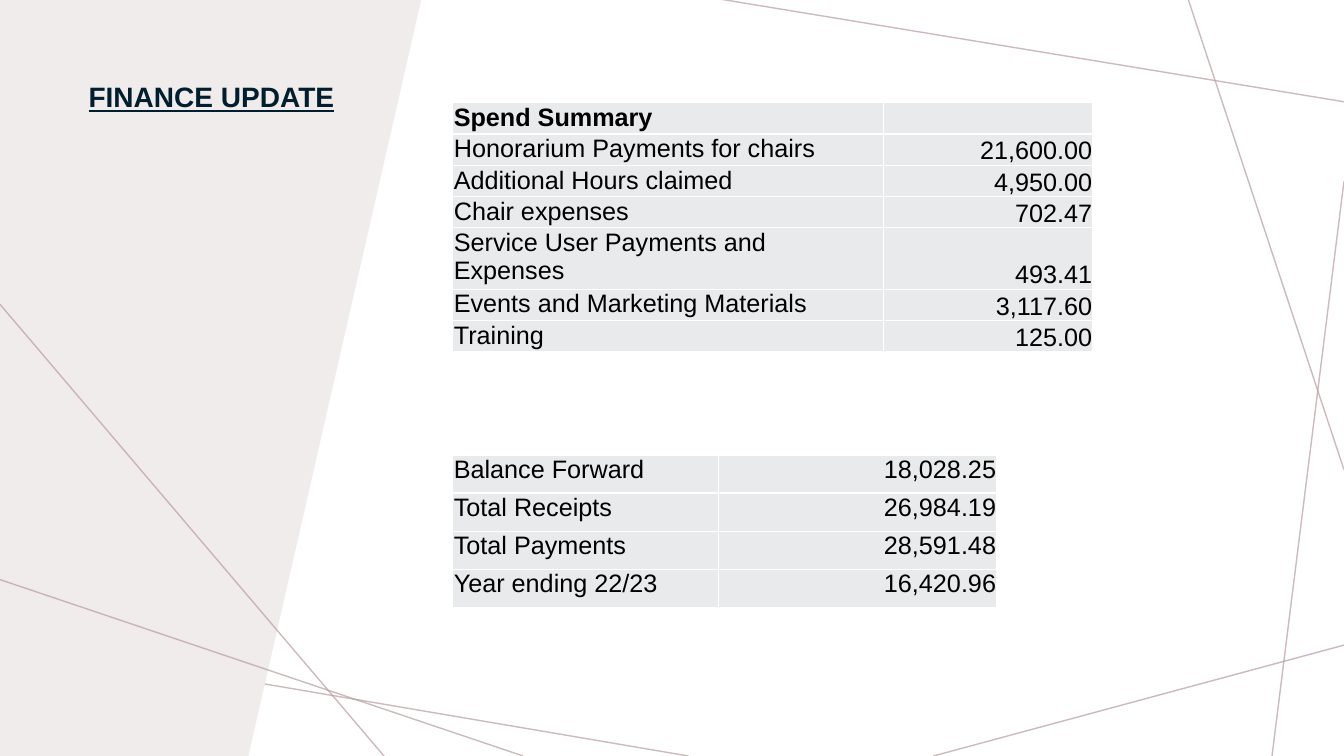
"""Builds the finance update slide with its two tables."""
from dataclasses import dataclass

from lxml import etree
from pptx import Presentation
from pptx.dml.color import RGBColor
from pptx.enum.shapes import MSO_CONNECTOR
from pptx.enum.text import MSO_ANCHOR, PP_ALIGN
from pptx.oxml import parse_xml
from pptx.oxml.ns import nsdecls, qn
from pptx.util import Pt

STRAIGHT = MSO_CONNECTOR.STRAIGHT
TOP, BOTTOM = MSO_ANCHOR.TOP, MSO_ANCHOR.BOTTOM
LEFT, RIGHT = PP_ALIGN.LEFT, PP_ALIGN.RIGHT


@dataclass(frozen=True)
class Theme:
    font: str = "Arial"
    title_size: int = 20
    table_size: int = 18
    title: RGBColor = RGBColor.from_string("001E2E")
    text: RGBColor = RGBColor.from_string("000000")
    panel: RGBColor = RGBColor.from_string("F0ECEC")
    ray: RGBColor = RGBColor.from_string("BA9CA0")
    cell: RGBColor = RGBColor.from_string("E8EAEB")
    border: RGBColor = RGBColor.from_string("FFFFFF")


theme = Theme()
prs = Presentation()
prs.slide_width, prs.slide_height = Pt(960), Pt(540)
slide = prs.slides.add_slide(prs.slide_layouts[6])
shapes = slide.shapes


def add_rays(rays):
    for ends in rays:
        ray = shapes.add_connector(STRAIGHT, *map(Pt, ends))
        ray.line.width = Pt(1)
        ray.line.color.rgb = theme.ray
        properties = ray._element.spPr
        colour = properties.find(".//" + qn("a:srgbClr"))
        etree.SubElement(colour, qn("a:alpha"), val="70000")
        etree.SubElement(properties, qn("a:effectLst"))


def add_ledger(rows, top, widths, heights, amount_anchor, has_heading):
    ledger = shapes.add_table(len(rows), 2, Pt(323.5), Pt(top),
                              Pt(sum(widths)), Pt(sum(heights))).table
    ledger.first_row = ledger.horz_banding = False
    for column, width in zip(ledger.columns, widths):
        column.width = Pt(width)
    for r, (entry, height) in enumerate(zip(rows, heights)):
        ledger.rows[r].height = Pt(height)
        for c, (wording, align, anchor) in enumerate(
                zip(entry, (LEFT, RIGHT), (TOP, amount_anchor))):
            cell = ledger.cell(r, c)
            cell.text = wording
            cell.margin_left = cell.margin_right = cell.margin_top = Pt(0.7)
            cell.margin_bottom = Pt(0)
            cell.vertical_anchor = anchor
            paragraph = cell.text_frame.paragraphs[0]
            paragraph.alignment = align
            paragraph.font.name = theme.font
            paragraph.font.size = Pt(theme.table_size)
            paragraph.font.color.rgb = theme.text
            paragraph.font.bold = has_heading and r == 0
            for side in ("lnL", "lnR", "lnT", "lnB"):
                cell._tc.get_or_add_tcPr().append(parse_xml(
                    f'<a:{side} {nsdecls("a")} w="{Pt(1)}"><a:solidFill>'
                    f'<a:srgbClr val="{theme.border}"/></a:solidFill></a:{side}>'))
            cell.fill.solid()
            cell.fill.fore_color.rgb = theme.cell


add_rays([
    (245.5, 0, 0, 54),
    (71.3, 0, 0, 515.5),
    (491.8, 540, -3.6, 455.8),
    (960, 460.8, 666.7, 540),
    (960, 129.6, 908.6, 540),
    (960, 335.5, 848.9, 0),
    (960, 72.7, 514.1, -0.7),
])

outline = shapes.build_freeform(Pt(0), Pt(-0.7))
outline.add_line_segments(
    [(Pt(301), Pt(-0.7)), (Pt(177.1), Pt(541.4)), (Pt(0), Pt(542.9))], close=True)
panel = outline.convert_to_shape()
panel.shadow.inherit = False
panel.fill.solid()
panel.fill.fore_color.rgb = theme.panel
panel.line.fill.background()

title_frame = shapes.add_textbox(Pt(56.2), Pt(56.2), Pt(194.4), Pt(146.2)).text_frame
title_frame.word_wrap = True
title = title_frame.paragraphs[0]
title.text = "FINANCE UPDATE"
title.line_spacing = 0.9
title.font.name = theme.font
title.font.size = Pt(theme.title_size)
title.font.color.rgb = theme.title
title.font.bold = title.font.underline = True

add_rays([(0, 217.4, 274.3, 540), (373.7, 540, 0, 414)])

add_ledger([
    ("Balance Forward", "18,028.25"),
    ("Total Receipts", "26,984.19"),
    ("Total Payments", "28,591.48"),
    ("Year ending 22/23", "16,420.96"),
], 325, (190, 198.7), [27.2] * 4, TOP, False)

add_ledger([
    ("Spend Summary", ""),
    ("Honorarium Payments for chairs", "21,600.00"),
    ("Additional Hours claimed", "4,950.00"),
    ("Chair expenses", "702.47"),
    ("Service User Payments and Expenses", "493.41"),
    ("Events and Marketing Materials", "3,117.60"),
    ("Training", "125.00"),
], 73.4, (307.5, 149.8), [20.4] * 4 + [40.8] + [20.4] * 2, BOTTOM, True)

prs.save("out.pptx")
